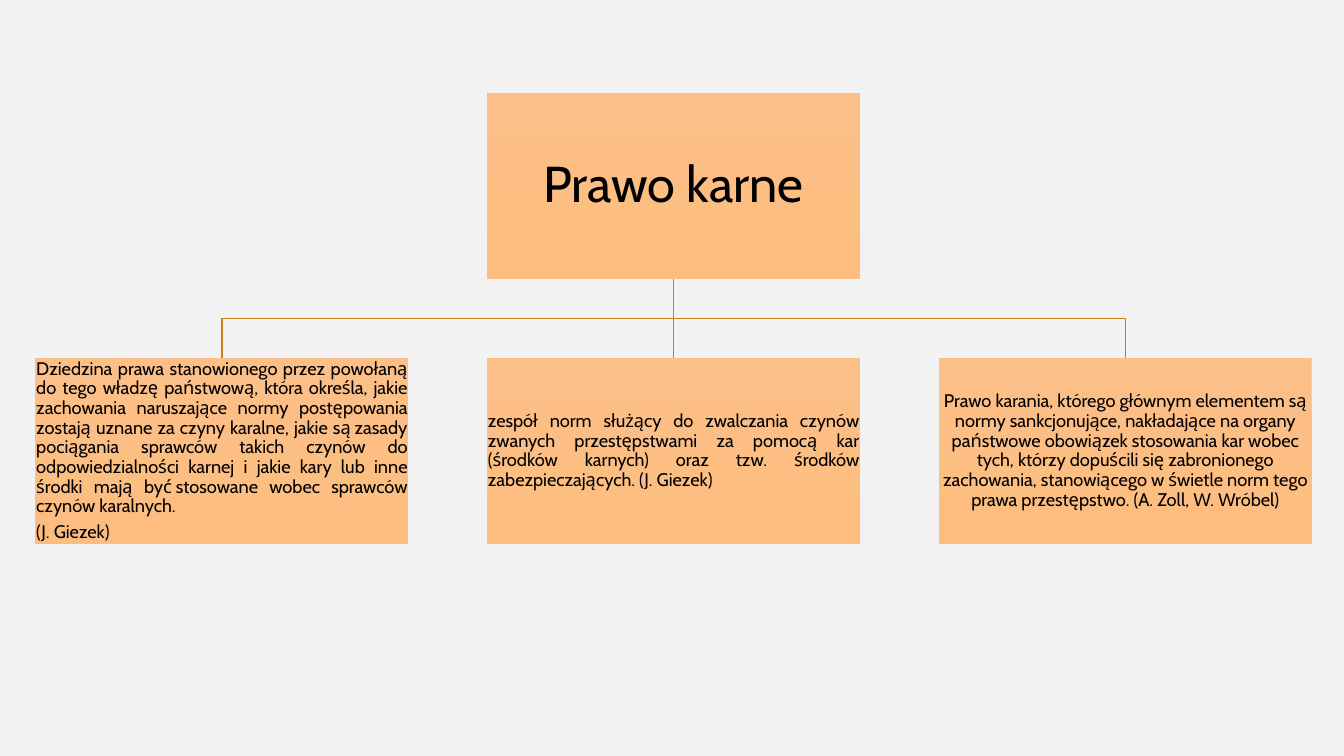
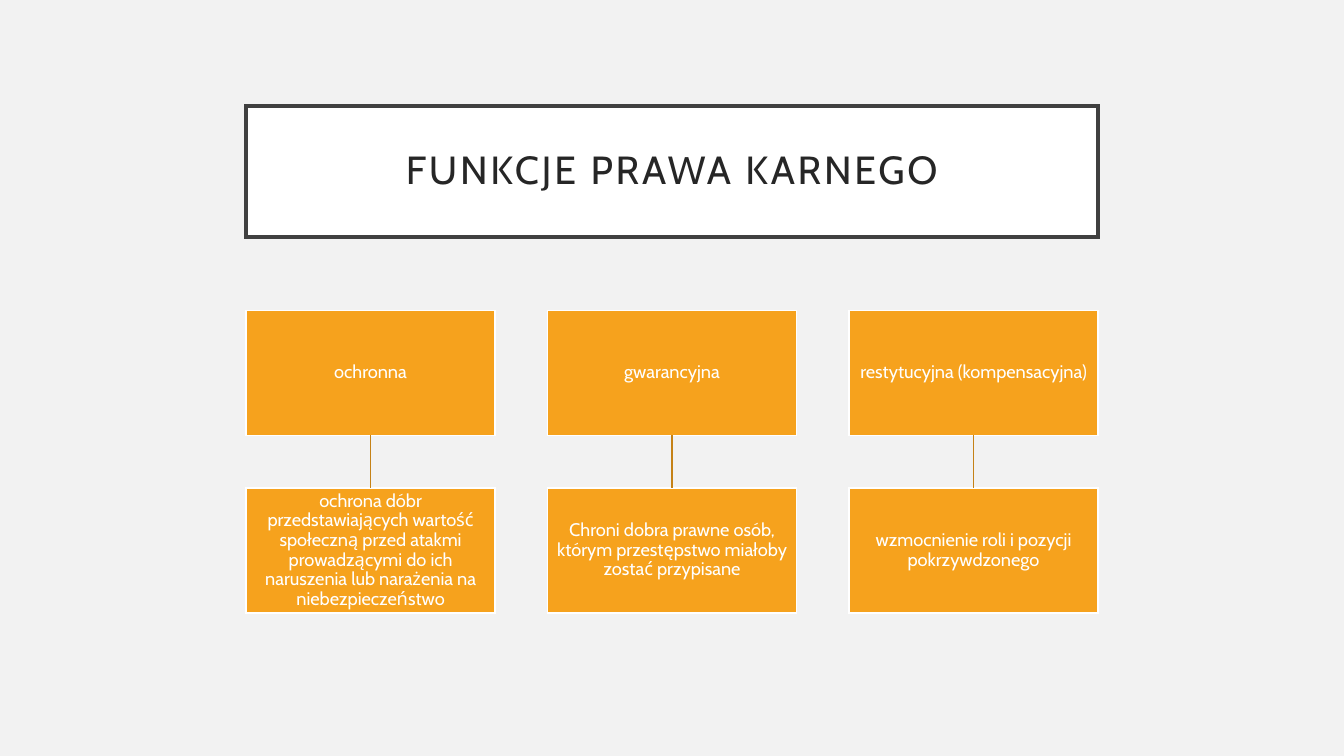
"""Build two slides on criminal law: its definitions and its functions."""
import dataclasses
import typing

import lxml.etree
import pptx
import pptx.dml.color
import pptx.enum.shapes
import pptx.enum.text
import pptx.oxml.ns
import pptx.util
from pptx.util import Inches

FONT = "Cabin"
BACKGROUND = "F2F2F2"
BLACK = "000000"
WHITE = "FFFFFF"
TITLE_TEXT = "262626"
TITLE_BORDER = "404040"
ORANGE = "F6A21D"
PEACH = ("FCBF87", "FDBD80")
CONNECTOR = "C58217"
CENTER = pptx.enum.text.PP_ALIGN.CENTER
JUSTIFY = pptx.enum.text.PP_ALIGN.JUSTIFY
TOP_SIDE, BOTTOM_SIDE = 0, 2
HARD_SPACE = chr(160)


@dataclasses.dataclass
class Definition:
    paragraphs: list[str]
    align: typing.Any = JUSTIFY


@dataclasses.dataclass
class Function:
    name: str
    meaning: str


DEFINITIONS = [
    Definition([
        "Dziedzina prawa stanowionego przez powołaną do tego władzę państwową, "
        "która określa, jakie zachowania naruszające normy postępowania zostają "
        f"uznane za czyny karalne, jakie są{HARD_SPACE}zasady pociągania sprawców "
        "takich czynów do odpowiedzialności karnej i jakie kary lub inne środki "
        f"mają być{HARD_SPACE}stosowane wobec sprawców czynów karalnych.",
        "(J. Giezek)",
    ]),
    Definition([
        "zespół norm służący do zwalczania czynów zwanych przestępstwami za "
        "pomocą kar (środków karnych) oraz tzw. środków zabezpieczających. "
        "(J. Giezek)",
    ]),
    Definition([
        "Prawo karania, którego głównym elementem są normy sankcjonujące, "
        "nakładające na organy państwowe obowiązek stosowania kar wobec tych, "
        "którzy dopuścili się zabronionego zachowania, stanowiącego w świetle "
        "norm tego prawa przestępstwo. (A. Zoll, W. Wróbel)",
    ], CENTER),
]

FUNCTIONS = [
    Function("ochronna",
             "ochrona dóbr przedstawiających wartość społeczną przed atakmi "
             "prowadzącymi do ich naruszenia lub narażenia na niebezpieczeństwo"),
    Function("gwarancyjna",
             "Chroni dobra prawne osób, którym przestępstwo miałoby zostać przypisane"),
    Function("restytucyjna (kompensacyjna)",
             "wzmocnienie roli i pozycji pokrzywdzonego"),
]


def color(value: str) -> pptx.dml.color.RGBColor:
    """Turn a hex string into a colour."""
    return pptx.dml.color.RGBColor.from_string(value)


def add_slide(presentation: typing.Any) -> typing.Any:
    """Add a blank slide with the shared background."""
    slide = presentation.slides.add_slide(presentation.slide_layouts[6])
    slide.background.fill.solid()
    slide.background.fill.fore_color.rgb = color(BACKGROUND)
    return slide


def write_text(shape: typing.Any, paragraphs: list[str], *, size: float = 13,
               text_color: str = BLACK, align: typing.Any = CENTER,
               inset: float = 0.01, space_after: float = 0.35,
               tracking: float = 0) -> None:
    """Fill a shape with vertically centred paragraphs."""
    frame = shape.text_frame
    frame.word_wrap = True
    frame.vertical_anchor = pptx.enum.text.MSO_ANCHOR.MIDDLE
    frame.margin_left = frame.margin_right = Inches(inset)
    frame.margin_top = frame.margin_bottom = Inches(inset)
    for index, text in enumerate(paragraphs):
        paragraph = frame.paragraphs[0] if index == 0 else frame.add_paragraph()
        paragraph.alignment = align
        paragraph.line_spacing = 0.9
        paragraph.space_after = pptx.util.Pt(size * space_after)
        run = paragraph.add_run()
        run.text = text
        run.font.name = FONT
        run.font.size = pptx.util.Pt(size)
        run.font.color.rgb = color(text_color)
        if tracking:
            run.font._element.set("spc", str(round(tracking * 100)))


def add_box(slide: typing.Any, left: float, top: float, width: float, height: float,
            *, fill: str | tuple[str, str], border: str | None = None,
            border_width: float = 1) -> typing.Any:
    """Add a rectangle with a plain fill or a top-to-bottom gradient."""
    shape = slide.shapes.add_shape(
        pptx.enum.shapes.MSO_SHAPE.RECTANGLE,
        Inches(left), Inches(top), Inches(width), Inches(height))
    shape.shadow.inherit = False
    if isinstance(fill, tuple):
        shape.fill.gradient()
        shape.fill.gradient_angle = 270
        for stop, stop_color in zip(shape.fill.gradient_stops, fill):
            stop.color.rgb = color(stop_color)
    else:
        shape.fill.solid()
        shape.fill.fore_color.rgb = color(fill)
    if border:
        shape.line.color.rgb = color(border)
        shape.line.width = pptx.util.Pt(border_width)
        outline = shape._element.spPr.find(pptx.oxml.ns.qn("a:ln"))
        lxml.etree.SubElement(outline, pptx.oxml.ns.qn("a:miter"), lim="800000")
    else:
        shape.line.fill.background()
    return shape


def join_boxes(slide: typing.Any, upper: typing.Any, lower: typing.Any) -> None:
    """Join two boxes, with an elbow when they are not in one column."""
    start_x, end_x = upper.left + upper.width // 2, lower.left + lower.width // 2
    start_y, end_y = upper.top + upper.height, lower.top
    across, down = abs(end_x - start_x), end_y - start_y
    is_elbow = across > Inches(0.01)
    kinds = pptx.enum.shapes.MSO_CONNECTOR
    line = slide.shapes.add_connector(
        kinds.ELBOW if is_elbow else kinds.STRAIGHT, start_x, start_y, end_x, end_y)
    line.line.color.rgb = color(CONNECTOR)
    line.line.width = pptx.util.Pt(1)
    lxml.etree.SubElement(line._element.spPr, pptx.oxml.ns.qn("a:effectLst"))
    line.begin_connect(upper, BOTTOM_SIDE)
    line.end_connect(lower, TOP_SIDE)
    if is_elbow:
        goes_right = end_x > start_x
        line.left = (start_x + end_x - down) // 2
        line.top = (start_y + end_y - across) // 2
        line.width, line.height = down, across
        frame = line._element.spPr.find(pptx.oxml.ns.qn("a:xfrm"))
        frame.set("rot", "16200000" if goes_right else "5400000")
        frame.set("flipH", "1" if goes_right else "0")


def build_definitions(presentation: typing.Any) -> None:
    """Draw the tree of definitions."""
    slide = add_slide(presentation)
    width, height = 3.7, 1.85
    first_left, step = 0.35, 4.48
    root = add_box(slide, first_left + step, 0.92, width, height, fill=PEACH)
    write_text(root, ["Prawo karne"], size=36, inset=0.03)
    for index, definition in enumerate(DEFINITIONS):
        leaf = add_box(slide, first_left + index * step, 3.55, width, height, fill=PEACH)
        write_text(leaf, definition.paragraphs, align=definition.align)
        join_boxes(slide, root, leaf)


def build_functions(presentation: typing.Any) -> None:
    """Draw the title and the pairs of function and meaning."""
    slide = add_slide(presentation)
    title = add_box(slide, 2.44, 1.05, 8.45, 1.3, fill=WHITE,
                    border=TITLE_BORDER, border_width=2.5)
    write_text(title, ["FUNKCJE PRAWA KARNEGO"], size=28, text_color=TITLE_TEXT,
               inset=0.2, space_after=0, tracking=2)

    width, height = 2.47, 1.24
    first_left, step = 2.44, 2.99
    for index, function in enumerate(FUNCTIONS):
        left = first_left + index * step
        name, meaning = [
            add_box(slide, left, top, width, height, fill=ORANGE, border=WHITE)
            for top in (3.08, 4.84)]
        write_text(name, [function.name], text_color=WHITE)
        write_text(meaning, [function.meaning], text_color=WHITE)
        join_boxes(slide, name, meaning)


def main() -> None:
    """Build and save the presentation."""
    presentation = pptx.Presentation()
    presentation.slide_width = Inches(13.33)
    presentation.slide_height = Inches(7.5)
    build_definitions(presentation)
    build_functions(presentation)
    presentation.save("out.pptx")


if __name__ == "__main__":
    main()
